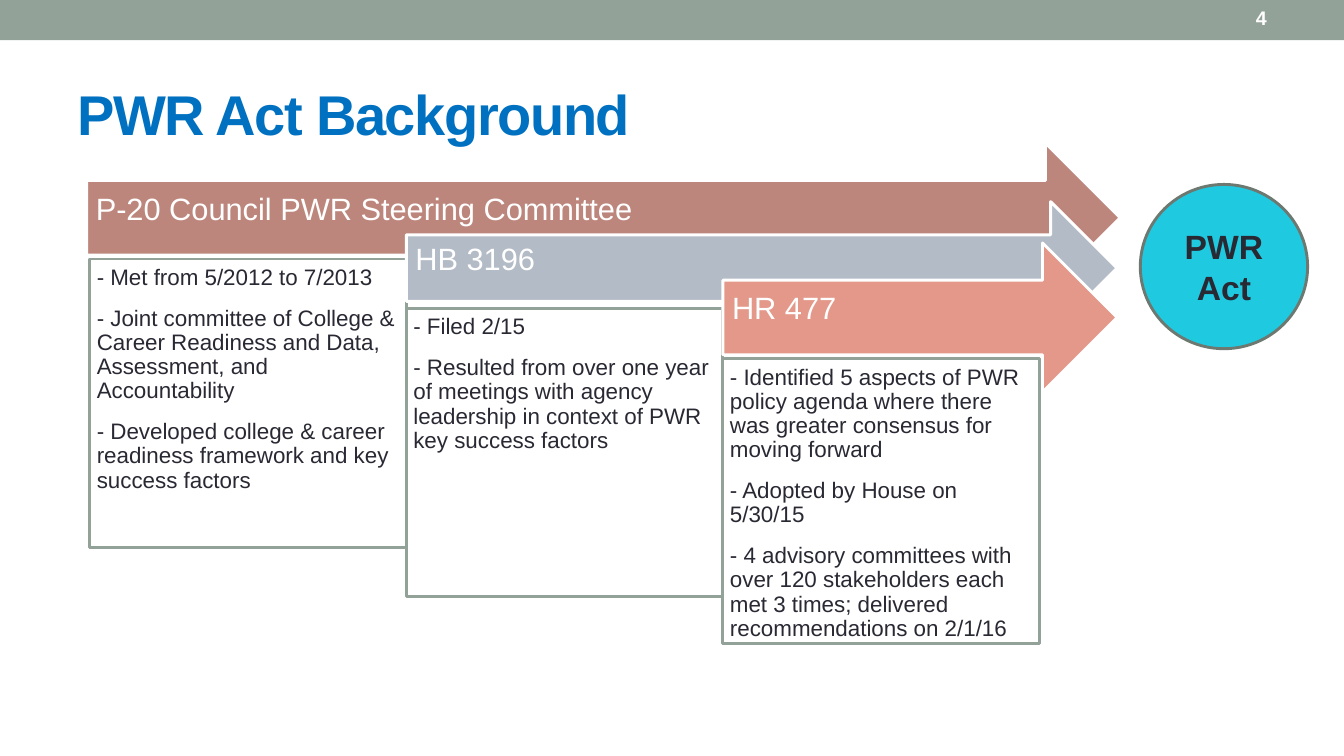
from pptx import Presentation
from pptx.dml.color import RGBColor
from pptx.enum.shapes import MSO_SHAPE
from pptx.enum.text import MSO_ANCHOR, PP_ALIGN
from pptx.util import Inches, Pt

RECTANGLE = MSO_SHAPE.RECTANGLE
ARROW = MSO_SHAPE.RIGHT_ARROW
OVAL = MSO_SHAPE.OVAL
TOP, MIDDLE = MSO_ANCHOR.TOP, MSO_ANCHOR.MIDDLE
LEFT, CENTER = PP_ALIGN.LEFT, PP_ALIGN.CENTER

WHITE = RGBColor(0xFF, 0xFF, 0xFF)
SAGE = RGBColor(0x93, 0xA2, 0x99)
DARK_SAGE = RGBColor(0x6D, 0x78, 0x71)
BLUE = RGBColor(0x00, 0x70, 0xC0)
INK = RGBColor(0x29, 0x29, 0x34)
ROSE = RGBColor(0xBD, 0x86, 0x7C)
GREY_BLUE = RGBColor(0xB3, 0xBB, 0xC6)
SALMON = RGBColor(0xE4, 0x98, 0x8A)
CYAN = RGBColor(0x1F, 0xCA, 0xE1)

TITLE = "PWR Act Background"
PAGE_NUMBER = "4"
OUTCOME = "PWR Act"
STAGES = [
    {
        "heading": "P-20 Council PWR Steering Committee",
        "color": ROSE,
        "arrow": (0.86, 1.42, 10.25, 1.48),
        "box": (0.89, 2.57, 3.14, 2.86),
        "details": [
            "- Met from 5/2012 to 7/2013",
            "- Joint committee of College & Career Readiness and Data, Assessment, and Accountability",
            "- Developed college & career readiness framework and key success factors",
        ],
    },
    {
        "heading": "HB 3196",
        "color": GREY_BLUE,
        "arrow": (4.03, 2, 7.05, 1.32),
        "box": (4.03, 3.06, 3.14, 2.86),
        "details": [
            "- Filed 2/15",
            "- Resulted from over one year of meetings with agency leadership in context of PWR key success factors",
        ],
    },
    {
        "heading": "HR 477",
        "color": SALMON,
        "arrow": (7.17, 2.41, 3.91, 1.48),
        "box": (7.17, 3.56, 3.14, 2.82),
        "details": [
            "- Identified 5 aspects of PWR policy agenda where there was greater consensus for moving forward",
            "- Adopted by House on 5/30/15",
            "- 4 advisory committees with over 120 stakeholders each met 3 times; delivered recommendations on 2/1/16",
        ],
    },
]

TITLE_FONT = {"size": Pt(40), "bold": True}
NUMBER_FONT = {"size": Pt(14), "bold": True}
HEADING_FONT = {"size": Pt(22)}
DETAIL_FONT = {"size": Pt(16)}
OUTCOME_FONT = {"size": Pt(24), "bold": True}
DEFAULT_INSETS = (0.1, 0.05, 0.1, 0.05)
HEADING_INSETS = (0.09, 0.09, 0.28, 0.24)
DETAIL_INSETS = (0.07, 0.07, 0.07, 0.07)
DETAIL_SPACING = {"line_spacing": 0.9, "space_after": Pt(12)}


def set_attributes(target, values):
    for name, value in values.items():
        setattr(target, name, value)


def write(shape, lines, font, color, anchor=MIDDLE, align=LEFT,
          insets=DEFAULT_INSETS, spacing=None):
    frame = shape.text_frame
    left, top, right, bottom = map(Inches, insets)
    set_attributes(frame, {
        "word_wrap": True, "vertical_anchor": anchor,
        "margin_left": left, "margin_top": top,
        "margin_right": right, "margin_bottom": bottom,
    })
    for index, line in enumerate(lines):
        paragraph = frame.paragraphs[0] if index == 0 else frame.add_paragraph()
        set_attributes(paragraph, {"alignment": align, **(spacing or {})})
        run = paragraph.add_run()
        run.text = line
        set_attributes(run.font, {"name": "Arial", **font})
        run.font.color.rgb = color


def add_shape(slide, kind, place, fill, line=None):
    shape = slide.shapes.add_shape(kind, *map(Inches, place))
    shape.shadow.inherit = False
    shape.fill.solid()
    shape.fill.fore_color.rgb = fill
    if line is None:
        shape.line.fill.background()
    else:
        shape.line.color.rgb = line
        shape.line.width = Pt(2.08)
    return shape


def add_text(slide, place):
    return slide.shapes.add_textbox(*map(Inches, place))


def add_stage(slide, stage):
    arrow = add_shape(slide, ARROW, stage["arrow"], stage["color"], WHITE)
    write(arrow, [stage["heading"]], HEADING_FONT, WHITE,
          insets=HEADING_INSETS, spacing={"line_spacing": 0.9})
    box = add_shape(slide, RECTANGLE, stage["box"], WHITE, SAGE)
    write(box, stage["details"], DETAIL_FONT, INK, anchor=TOP,
          insets=DETAIL_INSETS, spacing=DETAIL_SPACING)


def main():
    presentation = Presentation()
    presentation.slide_width = Inches(13.33)
    presentation.slide_height = Inches(7.5)
    slide = presentation.slides.add_slide(presentation.slide_layouts[6])

    add_shape(slide, RECTANGLE, (0, 0, 13.33, 0.4), SAGE)
    title = add_text(slide, (0.67, 0.58, 12, 1.08))
    write(title, [TITLE], TITLE_FONT, BLUE)
    title_run = title.text_frame.paragraphs[0].runs[0]
    title_run._r.get_or_add_rPr().set("spc", "-100")
    number = add_text(slide, (11.73, 0, 1.56, 0.36))
    write(number, [PAGE_NUMBER], NUMBER_FONT, WHITE, align=CENTER)

    for stage in STAGES:
        add_stage(slide, stage)

    outcome = add_shape(slide, OVAL, (11.31, 1.83, 1.66, 1.63), CYAN, DARK_SAGE)
    write(outcome, [OUTCOME], OUTCOME_FONT, INK, align=CENTER)

    presentation.save("out.pptx")


if __name__ == "__main__":
    main()
